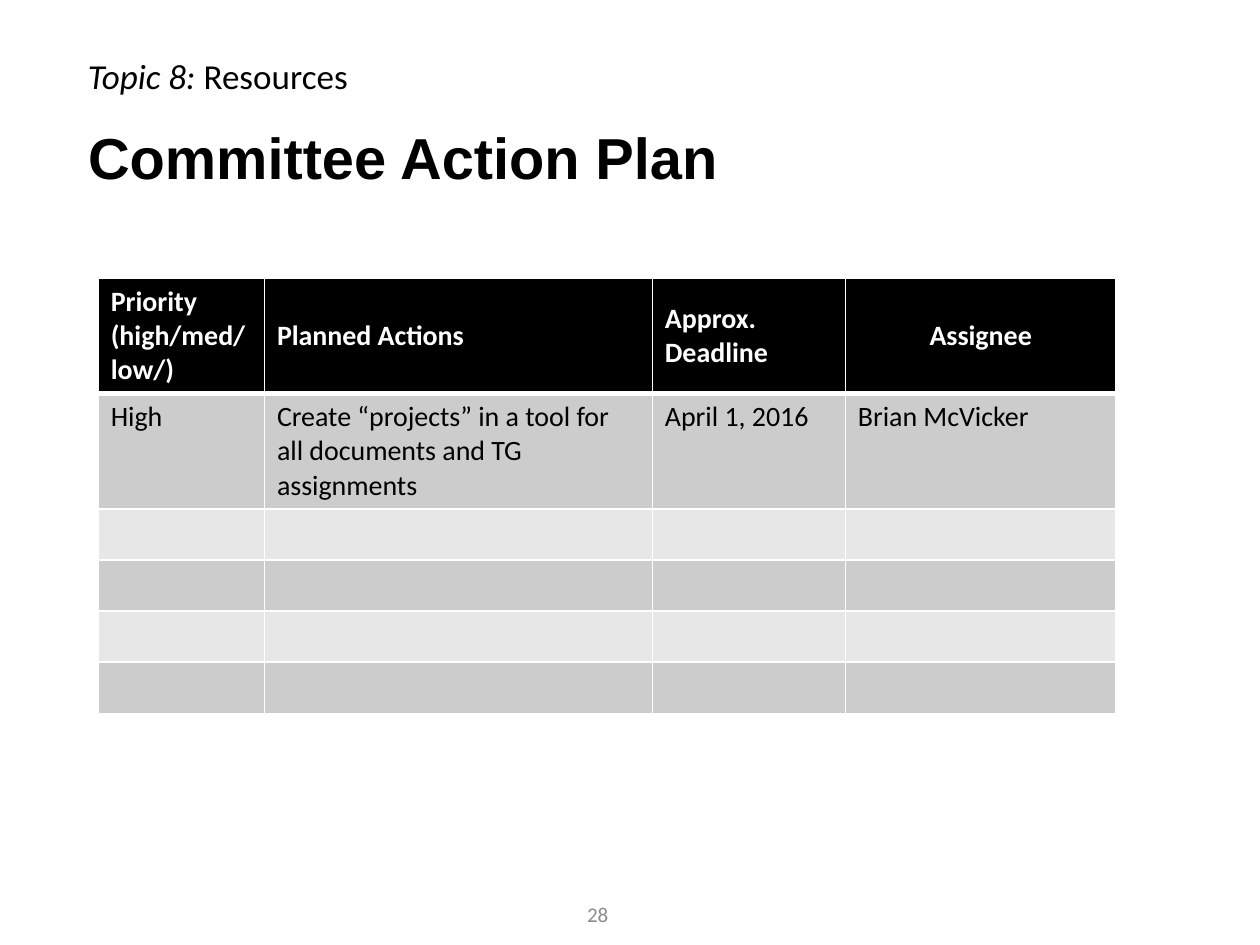
from lxml import etree
from pptx import Presentation
from pptx.dml.color import RGBColor as RGB
from pptx.enum.text import MSO_ANCHOR as Anchor, PP_ALIGN as Align
from pptx.oxml.ns import qn
from pptx.util import Cm, Pt

BLACK = RGB(0x00, 0x00, 0x00)
WHITE = RGB(0xFF, 0xFF, 0xFF)
GREY = RGB(0x8C, 0x8C, 0x8C)
DARK = RGB(0xCC, 0xCC, 0xCC)
LIGHT = RGB(0xE7, 0xE7, 0xE7)

TITLE = "Committee Action Plan"
TOPIC = [("Topic 8: ", True), ("Resources", False)]
PAGE = "28"
PLAN = [
    ["Priority (high/med/low/)", "Planned Actions", "Approx. Deadline", "Assignee"],
    ["High", "Create “projects” in a tool for all documents and TG assignments",
     "April 1, 2016", "Brian McVicker"],
] + [[""] * 4] * 4
WIDTHS = [3.35, 7.82, 3.89, 5.46]
HEAD, ROW = 1.7, 1.02


def style(run, size, color, name="Calibri", bold=False, italic=False):
    font = run.font
    font.size, font.name = Pt(size), name
    font.bold, font.italic = bold, italic
    font.color.rgb = color


def border(cell, head):
    props = cell._tc.get_or_add_tcPr()
    for side in "LRTB":
        width = Pt(3 if head and side == "B" else 1)
        line = etree.SubElement(props, qn("a:ln" + side), w=str(width))
        fill = etree.SubElement(line, qn("a:solidFill"))
        etree.SubElement(fill, qn("a:srgbClr"), val=str(WHITE))


def add_title(slide):
    title = slide.shapes.title
    title.left, title.top = Cm(1.52), Cm(1.4)
    title.width, title.height = Cm(21.89), Cm(3.68)
    frame = title.text_frame
    frame.text = TITLE
    frame.vertical_anchor = Anchor.MIDDLE
    para = frame.paragraphs[0]
    para.alignment, para.line_spacing = Align.LEFT, 0.9
    style(para.runs[0], 33, BLACK, "Arial", bold=True)


def add_plan(slide):
    table = slide.shapes.add_table(
        len(PLAN), len(WIDTHS), Cm(1.98), Cm(5.61),
        Cm(sum(WIDTHS)), Cm(HEAD + ROW * (len(PLAN) - 1))).table
    for col, width in zip(table.columns, WIDTHS):
        col.width = Cm(width)
    for r, texts in enumerate(PLAN):
        head = r == 0
        table.rows[r].height = Cm(HEAD if head else ROW)
        for c, text in enumerate(texts):
            cell = table.cell(r, c)
            border(cell, head)
            cell.fill.solid()
            cell.fill.fore_color.rgb = BLACK if head else DARK if r % 2 else LIGHT
            if head:
                cell.vertical_anchor = Anchor.MIDDLE
            if not text:
                continue
            cell.text_frame.text = text
            para = cell.text_frame.paragraphs[0]
            if head and c == len(texts) - 1:
                para.alignment = Align.CENTER
            style(para.runs[0], 16, WHITE if head else BLACK, bold=head)


def add_box(slide, left, top, width, height, parts, size, color):
    box = slide.shapes.add_textbox(Cm(left), Cm(top), Cm(width), Cm(height))
    frame = box.text_frame
    frame.word_wrap = True
    for text, italic in parts:
        run = frame.paragraphs[0].add_run()
        run.text = text
        style(run, size, color, italic=italic)
    return frame


def main():
    deck = Presentation()
    deck.slide_width, deck.slide_height = Cm(25.4), Cm(19.05)
    slide = deck.slides.add_slide(deck.slide_layouts[5])
    add_title(slide)
    add_plan(slide)
    add_box(slide, 1.52, 0.97, 19, 1.11, TOPIC, 20, BLACK)
    page = add_box(slide, 9.19, 17.91, 5.72, 1.02, [(PAGE, False)], 12, GREY)
    page.vertical_anchor = Anchor.MIDDLE
    page.paragraphs[0].alignment = Align.CENTER
    deck.save("out.pptx")


if __name__ == "__main__":
    main()
